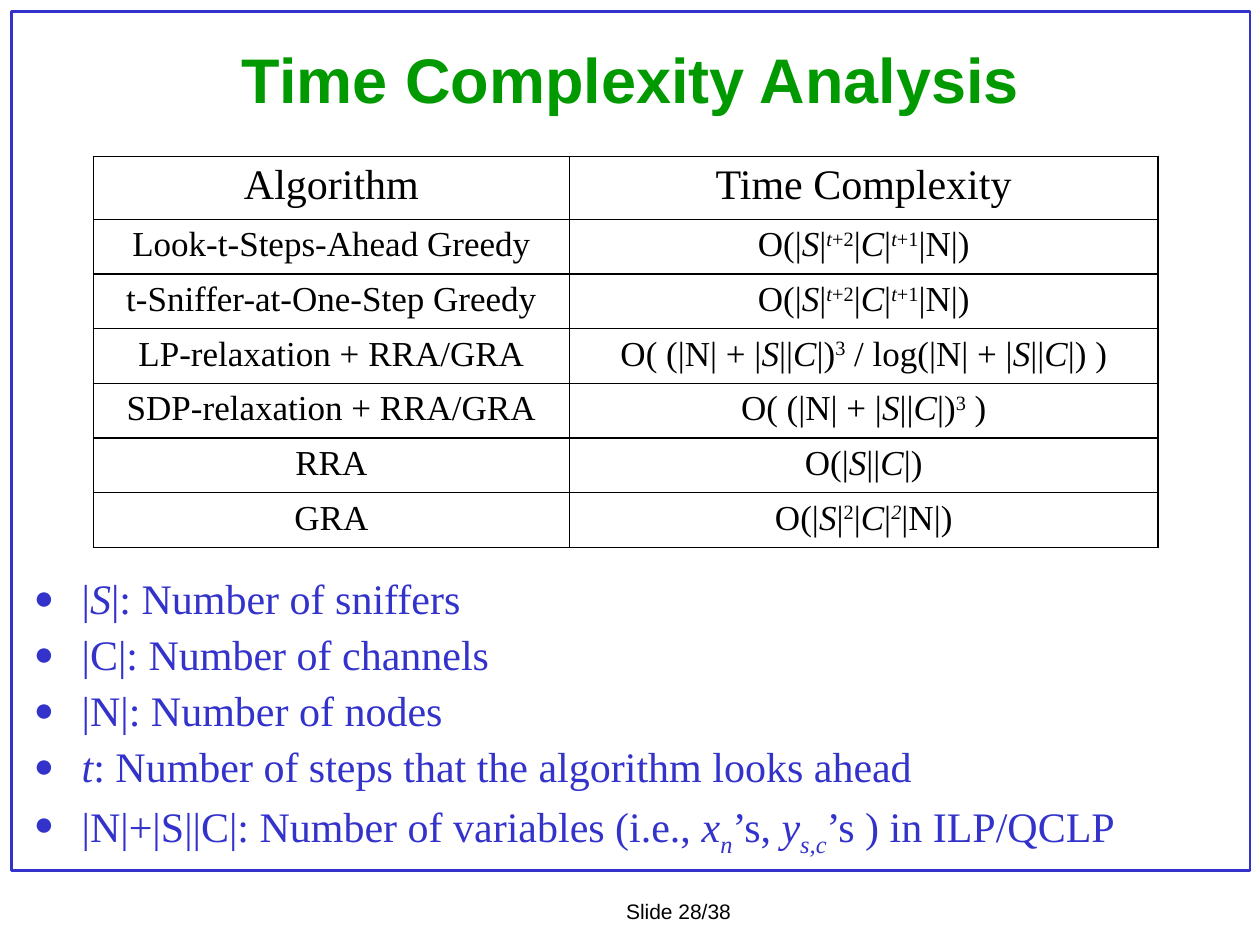
from lxml.etree import SubElement
from pptx import Presentation
from pptx.dml.color import RGBColor
from pptx.enum.shapes import MSO_SHAPE as Shape
from pptx.enum.text import MSO_ANCHOR as Anchor, PP_ALIGN as Align
from pptx.oxml.ns import qn
from pptx.util import Inches, Pt

BLUE = RGBColor(0x33, 0x33, 0xCC)
GREEN = RGBColor(0x00, 0x99, 0x00)
BLACK = RGBColor(0x00, 0x00, 0x00)
SERIF, SANS = "Times New Roman", "Arial"

# Run marks: i = italic, ^ = superscript, _ = subscript
BASELINES = {"^": "30000", "_": "-25000"}
S, C = ("S", "i"), ("C", "i")
STEPS_BOUND = ["O(|", S, "|", ("t", "i^"), ("+2", "^"), "|", C, "|",
               ("t", "i^"), ("+1", "^"), "|N|)"]
VARIABLES_CUBED = ["O( (|N| + |", S, "||", C, "|)", ("3", "^")]

COMPLEXITIES = [
    ("Algorithm", ["Time Complexity"]),
    ("Look-t-Steps-Ahead Greedy", STEPS_BOUND),
    ("t-Sniffer-at-One-Step Greedy", STEPS_BOUND),
    ("LP-relaxation + RRA/GRA",
     VARIABLES_CUBED + [" / log(|N| + |", S, "||", C, "|) )"]),
    ("SDP-relaxation + RRA/GRA", VARIABLES_CUBED + [" )"]),
    ("RRA", ["O(|", S, "||", C, "|)"]),
    ("GRA", ["O(|", S, "|", ("2", "^"), "|", C, "|", ("2", "i^"), "|N|)"]),
]
NOTATION = [
    ["|", S, "|: Number of sniffers"],
    ["|C|: Number of channels"],
    ["|N|: Number of nodes"],
    [("t", "i"), ": Number of steps that the algorithm looks ahead"],
    ["|N|+|S||C|: Number of variables (i.e., ", ("x", "i"), ("n", "i_"),
     "’s, ", ("y", "i"), ("s,c", "i_"), "’s ) in ILP/QCLP"],
]


def write_runs(paragraph, runs, color, **font_format):
    """Add plain strings and (text, marks) pairs as formatted runs."""
    for item in runs:
        text, marks = (item, "") if isinstance(item, str) else item
        run = paragraph.add_run()
        run.text = text
        for name, value in font_format.items():
            setattr(run.font, name, value)
        run.font.italic = "i" in marks
        run.font.color.rgb = color
        for mark, offset in BASELINES.items():
            if mark in marks:
                run.font._element.set("baseline", offset)


def add_text_frame(slide, box):
    frame = slide.shapes.add_textbox(*box).text_frame
    frame.word_wrap = True
    return frame


def add_border(slide, box):
    border = slide.shapes.add_shape(Shape.RECTANGLE, *box)
    border.shadow.inherit = False
    border.fill.background()
    border.line.color.rgb = BLUE
    border.line.width = Pt(1.5)


def add_title(slide, box):
    frame = add_text_frame(slide, box)
    frame.vertical_anchor = Anchor.MIDDLE
    heading = frame.paragraphs[0]
    heading.alignment = Align.CENTER
    write_runs(heading, ["Time Complexity Analysis"], GREEN,
               name=SANS, size=Pt(36), bold=True)


def add_slide_number(slide, box):
    frame = add_text_frame(slide, box)
    write_runs(frame.paragraphs[0], ["Slide 28/38"], BLACK,
               name=SANS, size=Pt(12))


def outline_cell(cell):
    properties = cell._tc.get_or_add_tcPr()
    for position, side in enumerate(("a:lnL", "a:lnR", "a:lnT", "a:lnB")):
        edge = SubElement(properties, qn(side), w=str(Pt(1)))
        properties.insert(position, edge)
        fill = SubElement(edge, qn("a:solidFill"))
        SubElement(fill, qn("a:srgbClr"), val=str(BLACK))


def add_complexity_table(slide, box):
    left, top, width, height = box
    table = slide.shapes.add_table(len(COMPLEXITIES), 2, *box).table
    table.first_row = table.horz_banding = False
    table.columns[0].width = Inches(3.78)
    table.columns[1].width = width - Inches(3.78)
    header_height = Inches(0.48)
    row_height = (height - header_height) // (len(COMPLEXITIES) - 1)
    for index, (algorithm, bound) in enumerate(COMPLEXITIES):
        is_header = index == 0
        table.rows[index].height = header_height if is_header else row_height
        for cell, runs in zip(table.rows[index].cells, ([algorithm], bound)):
            cell.fill.background()
            outline_cell(cell)
            paragraph = cell.text_frame.paragraphs[0]
            paragraph.alignment = Align.CENTER
            write_runs(paragraph, runs, BLACK, name=SERIF,
                       size=Pt(24 if is_header else 20))


def add_bullet(paragraph):
    properties = paragraph._p.get_or_add_pPr()
    properties.set("marL", str(Inches(0.38)))
    properties.set("indent", str(Inches(-0.38)))
    SubElement(properties, qn("a:buSzPct"), val="80000")
    SubElement(properties, qn("a:buFont"), typeface=SERIF)
    SubElement(properties, qn("a:buChar"), char="●")


def add_notation(slide, box):
    frame = add_text_frame(slide, box)
    for index, runs in enumerate(NOTATION):
        paragraph = frame.add_paragraph() if index else frame.paragraphs[0]
        add_bullet(paragraph)
        paragraph.line_spacing = 0.9
        paragraph.space_before = Pt(6 if index else 0)
        write_runs(paragraph, runs, BLUE, name=SERIF, size=Pt(24))


def main():
    deck = Presentation()
    deck.slide_width, deck.slide_height = Inches(10), Inches(7.5)
    slide = deck.slides.add_slide(deck.slide_layouts[6])
    regions = [
        (add_border, (0.09, 0.09, 9.83, 6.82)),
        (add_slide_number, (4.87, 7.08, 1.19, 0.3)),
        (add_title, (0.18, 0.24, 9.65, 0.76)),
        (add_notation, (0.17, 4.54, 9.69, 2.22)),
        (add_complexity_table, (0.74, 1.24, 8.45, 3.06)),
    ]
    for add_region, box in regions:
        add_region(slide, [Inches(length) for length in box])
    deck.save("out.pptx")


if __name__ == "__main__":
    main()
